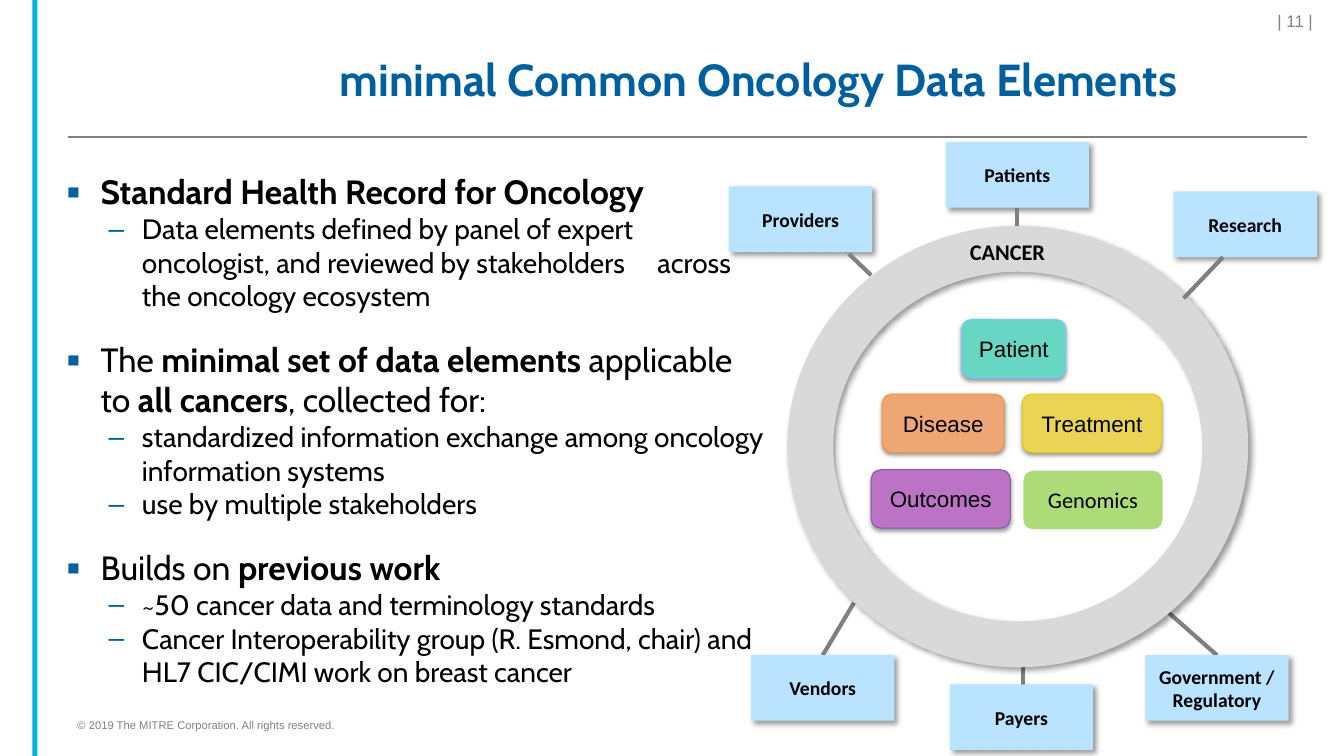
from lxml.etree import SubElement as Sub
from pptx import Presentation
from pptx.dml.color import RGBColor as RGB
from pptx.enum.shapes import MSO_CONNECTOR as LINK, MSO_SHAPE as KIND
from pptx.enum.text import MSO_ANCHOR as ANCHOR, PP_ALIGN as ALIGN
from pptx.oxml.ns import qn
from pptx.util import Inches, Pt

HUES = {
    "blue": "005F9E", "cyan": "00B3DC", "gray": "808080", "ring": "D9D9D9",
    "sky": "B9E3FF", "black": "000000", "teal": "67D7C4", "aqua": "72C7FF",
    "peach": "EEA674", "orange": "F69240", "yellow": "EAD456", "gold": "ECC900",
    "purple": "BC73C6", "violet": "7D60A0", "green": "ACDB78",
}

deck = Presentation()
deck.slide_width, deck.slide_height = Inches(13.33), Inches(7.5)
slide = deck.slides.add_slide(deck.slide_layouts[6])
shapes = slide.shapes


def say(para, text, size, face, hue="black", bold=False):
    """Add one styled run to a paragraph."""
    run = para.add_run()
    run.text = text
    run.font.size, run.font.name, run.font.bold = Pt(size), face, bold
    run.font.color.rgb = RGB.from_string(HUES[hue])
    return run


def link(x1, y1, x2, y2, width=3):
    """Draw a gray line between two points."""
    line = shapes.add_connector(LINK.STRAIGHT, *map(Inches, (x1, y1, x2, y2)))
    line.line.color.rgb = RGB.from_string(HUES["gray"])
    line.line.width = Pt(width)
    Sub(line._element.spPr, qn("a:effectLst"))


# Rule under the title, and the lower spokes that the ring covers
link(0.67, 1.36, 12.96, 1.36, 1)
link(11.48, 5.98, 12.07, 6.5)
link(8.16, 6.5, 8.47, 5.98)
link(10.15, 6.5, 10.15, 6.95)

# Side bar, ring, data groups and stakeholders
# Shadow: opacity %, blur pt, distance pt, angle
deep, soft = (40, 4, 3, 45), (38, 3.1, 1.6, 90)
items = [
    (KIND.RECTANGLE, (0.32, 0, 0.05, 7.5), "cyan", None, None, "", 0, "Arial"),
    (KIND.DONUT, (7.81, 2.24, 4.57, 4.38), "ring", None, deep, "", 0, "Arial"),
]
for name, x, y, wide, fill, edge, shade, face in [
    ("Patient", 9.54, 3.17, 1.03, "teal", "aqua", soft, "Arial"),
    ("Disease", 8.75, 3.91, 1.21, "peach", "orange", soft, "Arial"),
    ("Treatment", 10.14, 3.91, 1.38, "yellow", "gold", soft, "Arial"),
    ("Outcomes", 8.64, 4.66, 1.38, "purple", "violet", soft, "Arial"),
    ("Genomics", 10.15, 4.67, 1.38, "green", None, None, "Calibri"),
]:
    items.append((KIND.ROUNDED_RECTANGLE, (x, y, wide, 0.58), fill, edge, shade,
                  name, 16, face))
for name, x, y in [
    ("Government / Regulatory", 11.36, 6.5), ("Providers", 7.23, 1.85),
    ("Research", 11.64, 1.9), ("Payers", 9.42, 6.79),
    ("Vendors", 7.45, 6.5), ("Patients", 9.38, 1.41),
]:
    items.append((KIND.RECTANGLE, (x, y, 1.42, 0.65), "sky", None, deep,
                  name, 14, "Calibri"))

for kind, place, fill, edge, shade, name, size, face in items:
    shape = shapes.add_shape(kind, *map(Inches, place))
    shape.fill.solid()
    shape.fill.fore_color.rgb = RGB.from_string(HUES[fill])
    if edge:
        shape.line.color.rgb = RGB.from_string(HUES[edge])
        shape.line.width = Pt(0.75)
    else:
        shape.line.fill.background()
    if kind == KIND.DONUT:
        shape.adjustments[0] = 0.104
    shape.shadow.inherit = False
    if shade:
        alpha, blur, dist, angle = shade
        cast = Sub(shape._element.spPr.find(qn("a:effectLst")), qn("a:outerShdw"),
                   blurRad=str(Pt(blur)), dist=str(Pt(dist)),
                   dir=str(angle * 60000), rotWithShape="0")
        tint = Sub(cast, qn("a:srgbClr"), val=HUES["black"])
        Sub(tint, qn("a:alpha"), val=str(alpha * 1000))
    if name:
        frame = shape.text_frame
        frame.word_wrap, frame.vertical_anchor = True, ANCHOR.MIDDLE
        para = frame.paragraphs[0]
        para.alignment = ALIGN.CENTER
        say(para, name, size, face, bold=size == 14)

# Upper spokes, from stakeholder to ring
link(8.42, 2.52, 8.64, 2.73)
link(10.09, 2.06, 10.09, 2.24)
link(12.13, 2.55, 11.74, 2.96)

# Single-line texts
for place, text, size, face, hue, bold, align, anchor, wrap in [
    ((3.27, 0.4, 9.69, 0.82), "minimal Common Oncology Data Elements",
     32, "Cabin", "blue", True, ALIGN.LEFT, ANCHOR.MIDDLE, True),
    ((0.67, 7.08, 8.24, 0.26), "© 2019 The MITRE Corporation. All rights reserved.",
     8, "Arial", "gray", False, ALIGN.LEFT, ANCHOR.TOP, True),
    ((11.24, 0.06, 1.88, 0.28), "| 11 |",
     12, "Arial", "gray", False, ALIGN.RIGHT, ANCHOR.TOP, True),
    ((9.52, 2.31, 1.16, 0.37), "CANCER",
     16, "Calibri", "black", True, ALIGN.LEFT, ANCHOR.TOP, False),
]:
    frame = shapes.add_textbox(*map(Inches, place)).text_frame
    frame.word_wrap, frame.vertical_anchor = wrap, anchor
    para = frame.paragraphs[0]
    para.alignment = align
    if size == 32:
        para.line_spacing = 0.9
    say(para, text, size, face, hue, bold)

# Bullets: level, then (text, bold) runs
points = [
    (0, [("Standard Health Record for Oncology", True)]),
    (1, [("Data elements defined by panel of expert oncologist, and reviewed by "
          "stakeholders", False), (" ", False),
         ("across the oncology ecosystem", False)]),
    (0, [("The ", False), ("minimal set of data elements ", True),
         ("applicable to ", False), ("all cancers", True),
         (", collected for:", False)]),
    (1, [("standardized information exchange among oncology information systems",
          False)]),
    (1, [("use by multiple stakeholders", False)]),
    (0, [("Builds on ", False), ("previous work", True)]),
    (1, [("~50 cancer data and terminology standards", False)]),
    (1, [("Cancer Interoperability group (R. Esmond, chair) and HL7 CIC/CIMI work "
          "on breast cancer", False)]),
]
# Per level: left margin, hanging indent, bullet, bullet size %, text size
levels = [(0.34, 0.34, "▪", 120, 24), (0.75, 0.33, "–", 100, 20)]
body = shapes.add_textbox(*map(Inches, (0.56, 1.65, 7.15, 5.61))).text_frame
body.word_wrap = True
for i, (level, runs) in enumerate(points):
    para = body.add_paragraph() if i else body.paragraphs[0]
    left, hang, mark, scale, size = levels[level]
    para.level = level
    if i and level == 0:
        para.space_before = Pt(19)
    props = para._p.get_or_add_pPr()
    props.set("marL", str(Inches(left)))
    props.set("indent", str(-Inches(hang)))
    Sub(Sub(props, qn("a:buClr")), qn("a:srgbClr"), val=HUES["blue"])
    Sub(props, qn("a:buSzPct"), val=str(scale * 1000))
    Sub(props, qn("a:buFont"), typeface="Arial")
    Sub(props, qn("a:buChar"), char=mark)
    for text, bold in runs:
        run = say(para, text, size, "Cabin", bold=bold)
        if text == " ":
            run.font._element.set("spc", "1850")  # wide gap before "across"

deck.save("out.pptx")
